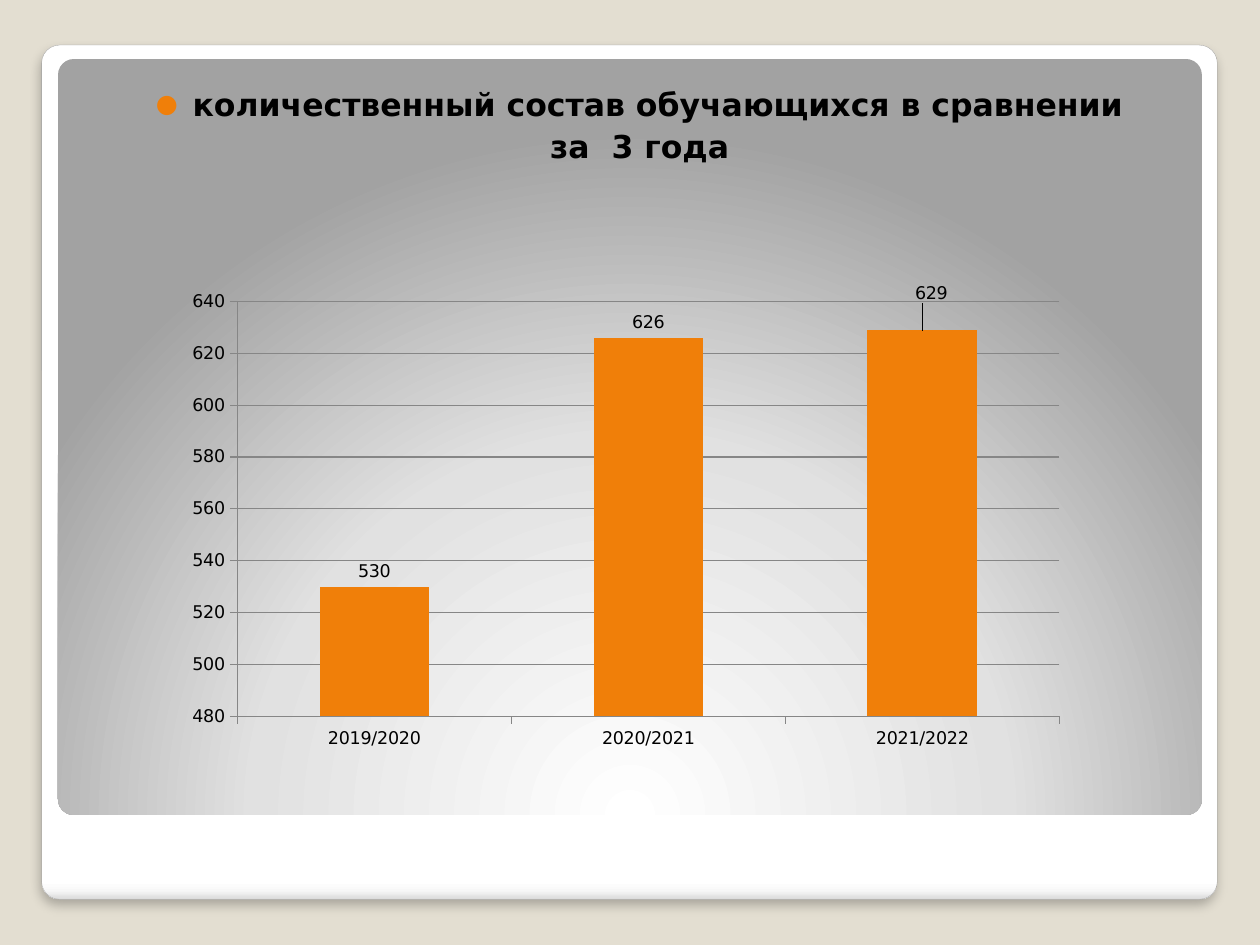
"""Build a slide comparing pupil numbers over three school years."""
import pptx
import pptx.chart.data
import pptx.dml.color
import pptx.enum.chart
import pptx.enum.shapes
import pptx.enum.text
import pptx.oxml
import pptx.oxml.ns
import pptx.util
from pptx.util import Cm, Pt

RGBColor = pptx.dml.color.RGBColor
BEIGE = RGBColor(0xE3, 0xDE, 0xD1)
ORANGE = RGBColor(0xF0, 0x7F, 0x09)
BLACK = RGBColor(0, 0, 0)
GREY = RGBColor(0x86, 0x86, 0x86)
EDGE = RGBColor(0xA4, 0xA4, 0xA4)
FONT = "DejaVu Sans"


def parse_xml(tag, prefix, attributes="", content=""):
    declaration = pptx.oxml.ns.nsdecls(prefix)
    return pptx.oxml.parse_xml(
        f"<{prefix}:{tag} {declaration} {attributes}>{content}</{prefix}:{tag}>")


def add_card(slide, left, top, width, height, stops, direction):
    card = slide.shapes.add_shape(
        pptx.enum.shapes.MSO_SHAPE.ROUNDED_RECTANGLE, left, top, width, height)
    card.adjustments[0] = 0.021
    card.line.fill.background()
    card.shadow.inherit = False
    stop_list = "".join(
        f'<a:gs pos="{position * 1000}"><a:srgbClr val="{color}"/></a:gs>'
        for position, color in stops)
    gradient = parse_xml("gradFill", "a", 'rotWithShape="1"',
                         f"<a:gsLst>{stop_list}</a:gsLst>{direction}")
    card._element.spPr.find(pptx.oxml.ns.qn("a:prstGeom")).addnext(gradient)
    slide.shapes.title._element.addprevious(card._element)
    return card


deck = pptx.Presentation()
deck.slide_width, deck.slide_height = Cm(25.4), Cm(19.05)
slide = deck.slides.add_slide(deck.slide_layouts[5])
slide.background.fill.solid()
slide.background.fill.fore_color.rgb = BEIGE

frame_card = add_card(
    slide, Cm(0.84), Cm(0.91), Cm(23.7), Cm(17.22),
    [(0, "FFFFFF"), (98, "FFFFFF"), (99, "F7F7F7"), (100, "DADADA")],
    '<a:lin ang="5400000" scaled="0"/>')
frame_card.line.color.rgb = EDGE
frame_card.line.width = Pt(0.16)
frame_card._element.spPr.find(pptx.oxml.ns.qn("a:effectLst")).append(parse_xml(
    "outerShdw", "a",
    f'blurRad="{Pt(6)}" dist="{Pt(4)}" dir="5400000" algn="tl" rotWithShape="0"',
    '<a:srgbClr val="000000"><a:alpha val="25000"/></a:srgbClr>'))

add_card(
    slide, Cm(1.17), Cm(1.19), Cm(23.06), Cm(15.24),
    [(0, "FFFFFF"), (55, "E1E1E1"), (100, "A2A2A2")],
    '<a:path path="circle">'
    '<a:fillToRect l="50000" t="175000" r="50000" b="-75000"/></a:path>')

title = slide.shapes.title
title.left, title.top, title.width, title.height = Cm(1.4), Cm(1.47), Cm(22.73), Cm(11.63)
text_frame = title.text_frame
text_frame.text = "количественный состав обучающихся в сравнении\nза  3 года"
text_frame.word_wrap = True
text_frame.auto_size = pptx.enum.text.MSO_AUTO_SIZE.NONE
text_frame.vertical_anchor = pptx.enum.text.MSO_ANCHOR.TOP
text_frame.margin_left, text_frame.margin_top = Cm(0.51), Cm(0.25)
text_frame.margin_right, text_frame.margin_bottom = Cm(0.25), Cm(0.13)
for para in text_frame.paragraphs:
    para.alignment = pptx.enum.text.PP_ALIGN.CENTER
    para.space_before = Pt(2.5)
    para.font.name = FONT
    para.font.size = Pt(18)
    para.font.bold = True
    para.font.color.rgb = BLACK

properties = text_frame.paragraphs[0]._p.get_or_add_pPr()
properties.set("marL", str(Cm(0.74)))
properties.set("indent", str(-Cm(0.74)))
bullet_parts = [
    parse_xml("buClr", "a", "", f'<a:srgbClr val="{ORANGE}"/>'),
    parse_xml("buSzPct", "a", 'val="80000"'),
    parse_xml("buFont", "a", f'typeface="{FONT}"'),
    parse_xml("buChar", "a", 'char="●"'),
]
run_defaults = properties.find(pptx.oxml.ns.qn("a:defRPr"))
for part in bullet_parts:
    run_defaults.addprevious(part)

chart_data = pptx.chart.data.CategoryChartData()
chart_data.categories = ["2019/2020", "2020/2021", "2021/2022"]
chart_data.add_series("Series 1", [530, 626, 629])
chart = slide.shapes.add_chart(
    pptx.enum.chart.XL_CHART_TYPE.COLUMN_CLUSTERED,
    Cm(3.51), Cm(4.32), Cm(18.21), Cm(11), chart_data).chart
chart.has_title = False
chart.has_legend = False
chart.font.name = FONT
chart.font.size = Pt(10)
chart.font.color.rgb = BLACK

value_axis = chart.value_axis
value_axis.minimum_scale, value_axis.maximum_scale = 480, 640
value_axis.major_unit = 20
value_axis.has_major_gridlines = True
for line in (value_axis.format.line, chart.category_axis.format.line,
             value_axis.major_gridlines.format.line):
    line.color.rgb = GREY
    line.width = Pt(0.75)

plot = chart.plots[0]
plot.gap_width = 150
plot.vary_by_categories = False
series = plot.series[0]
series.format.fill.solid()
series.format.fill.fore_color.rgb = ORANGE
labels = series.data_labels
labels.show_value = True
labels.position = pptx.enum.chart.XL_LABEL_POSITION.OUTSIDE_END
series.points[2].data_label.position = pptx.enum.chart.XL_LABEL_POSITION.OUTSIDE_END
label_index = series._element.xpath("c:dLbls/c:dLbl/c:idx")[0]
label_index.addnext(parse_xml(
    "layout", "c", "",
    '<c:manualLayout><c:x val="0.01"/><c:y val="-0.04"/></c:manualLayout>'))

plot_area = chart._chartSpace.chart.plotArea
for old_layout in plot_area.findall(pptx.oxml.ns.qn("c:layout")):
    plot_area.remove(old_layout)
plot_area.insert(0, parse_xml(
    "layout", "c", "",
    '<c:manualLayout><c:layoutTarget val="inner"/>'
    '<c:xMode val="edge"/><c:yMode val="edge"/>'
    '<c:x val="0.07"/><c:y val="0.16"/><c:w val="0.91"/><c:h val="0.76"/>'
    "</c:manualLayout>"))

deck.save("out.pptx")
